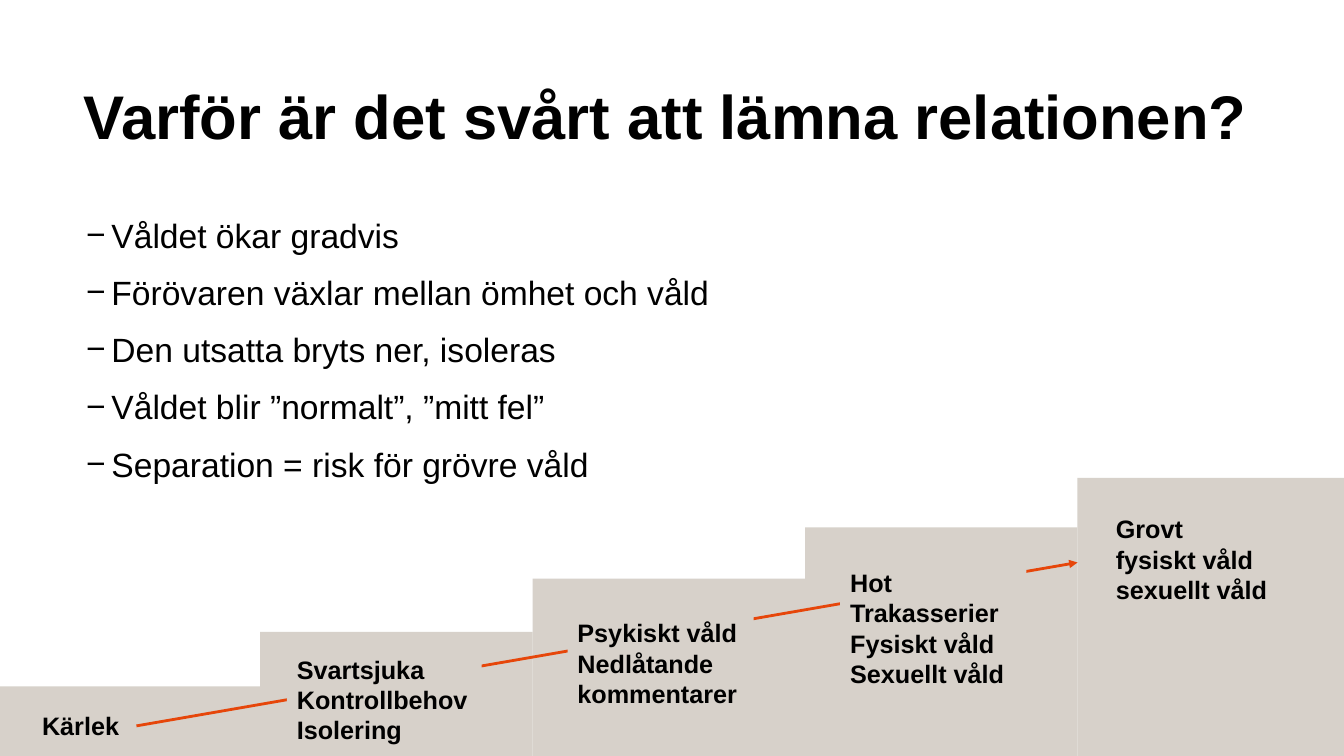
from dataclasses import dataclass

from lxml import etree
from pptx import Presentation
from pptx import util as u
from pptx.dml.color import RGBColor
from pptx.enum import shapes, text
from pptx.oxml import ns


@dataclass(frozen=True)
class Theme:
    font: str = "Arial"
    ink: RGBColor = RGBColor(0x00, 0x00, 0x00)
    stair: RGBColor = RGBColor(0xD7, 0xD1, 0xCA)
    arrow: RGBColor = RGBColor(0xE6, 0x46, 0x0A)
    title_size: float = 44
    body_size: float = 24
    label_size: float = 18


@dataclass(frozen=True)
class Box:
    left: float
    top: float
    width: float
    height: float

    def lengths(self) -> tuple:
        return u.Pt(self.left), u.Pt(self.top), u.Pt(self.width), u.Pt(self.height)


@dataclass(frozen=True)
class Label:
    box: Box
    lines: tuple[str, ...]


THEME = Theme()
TITLE = "Varför är det svårt att lämna relationen?"
TITLE_BOX = Box(52.5, 62, 855, 88)
REASONS_BOX = Box(52.5, 150, 757, 207)
REASONS = (
    "Våldet ökar gradvis",
    "Förövaren växlar mellan ömhet och våld",
    "Den utsatta bryts ner, isoleras",
    "Våldet blir ”normalt”, ”mitt fel”",
    "Separation = risk för grövre våld",
)
STAIR_TOPS = (490.3, 451.4, 413.3, 376.6, 341.3)
STAIR_BOTTOM = 542
STAIR_WIDTH = 194.6
FIRST_STAIR_RIGHT = 185.8
FIRST_STAIR_LEFT = -3.6
LOVE = Label(Box(23, 504, 74.5, 29), ("Kärlek",))
LABELS = (
    Label(Box(405.4, 437.6, 133, 72.7), ("Psykiskt våld", "Nedlåtande kommentarer")),
    Label(Box(600.2, 401.8, 133, 94.5), ("Hot", "Trakasserier Fysiskt våld", "Sexuellt våld")),
    Label(Box(205, 463.6, 139, 72.7), ("Svartsjuka", "Kontrollbehov", "Isolering")),
    Label(Box(790, 363.4, 126.7, 72.7), ("Grovt", "fysiskt våld", "sexuellt våld")),
)
ARROW_END = (769.7, 401.8)


def style(paragraph, size: float, bold: bool) -> None:
    paragraph.alignment = text.PP_ALIGN.LEFT
    font = paragraph.font
    font.name = THEME.font
    font.size = u.Pt(size)
    font.bold = bold
    font.color.rgb = THEME.ink


def add_title(slide) -> None:
    title = slide.shapes.title
    title.left, title.top, title.width, title.height = TITLE_BOX.lengths()
    frame = title.text_frame
    frame.text = TITLE
    frame.auto_size = text.MSO_AUTO_SIZE.NONE
    frame.vertical_anchor = text.MSO_ANCHOR.TOP
    paragraph = frame.paragraphs[0]
    paragraph.line_spacing = 0.8
    style(paragraph, THEME.title_size, True)


def add_bullet(paragraph) -> None:
    properties = paragraph._p.get_or_add_pPr()
    properties.set("marL", str(u.Pt(20)))
    properties.set("indent", str(u.Pt(-18)))
    etree.SubElement(properties, ns.qn("a:buFont")).set("typeface", THEME.font)
    etree.SubElement(properties, ns.qn("a:buChar")).set("char", "−")


def add_reasons(slide) -> None:
    frame = slide.shapes.add_textbox(*REASONS_BOX.lengths()).text_frame
    frame.word_wrap = True
    frame.text = "\n".join(REASONS)
    for paragraph in frame.paragraphs:
        add_bullet(paragraph)
        paragraph.space_after = u.Pt(12)
        style(paragraph, THEME.body_size, False)


def add_block(slide, box: Box):
    block = slide.shapes.add_shape(shapes.MSO_SHAPE.RECTANGLE, *box.lengths())
    block.shadow.inherit = False
    block.fill.solid()
    block.fill.fore_color.rgb = THEME.stair
    block.line.fill.background()
    return block


def add_stairs(slide) -> None:
    for index, top in enumerate(STAIR_TOPS):
        right = FIRST_STAIR_RIGHT + index * STAIR_WIDTH
        left = right - STAIR_WIDTH if index else FIRST_STAIR_LEFT
        add_block(slide, Box(left, top, right - left, STAIR_BOTTOM - top))


def add_label(slide, label: Label):
    block = add_block(slide, label.box)
    frame = block.text_frame
    frame.word_wrap = True
    frame.auto_size = text.MSO_AUTO_SIZE.SHAPE_TO_FIT_TEXT
    frame.vertical_anchor = text.MSO_ANCHOR.TOP
    frame.text = "\n".join(label.lines)
    for paragraph in frame.paragraphs:
        style(paragraph, THEME.label_size, True)
    return block


def add_arrow(slide, start) -> None:
    end_x, end_y = ARROW_END
    arrow = slide.shapes.add_connector(
        shapes.MSO_CONNECTOR.STRAIGHT, 0, 0, u.Pt(end_x), u.Pt(end_y)
    )
    arrow.begin_connect(start, 3)
    arrow.line.color.rgb = THEME.arrow
    arrow.line.width = u.Pt(2)
    etree.SubElement(arrow.line._get_or_add_ln(), ns.qn("a:tailEnd")).set("type", "triangle")
    etree.SubElement(arrow._element.spPr, ns.qn("a:effectLst"))


def main() -> None:
    presentation = Presentation()
    presentation.slide_width = u.Pt(960)
    presentation.slide_height = u.Pt(540)
    slide = presentation.slides.add_slide(presentation.slide_layouts[5])
    add_title(slide)
    add_reasons(slide)
    add_stairs(slide)
    love = add_label(slide, LOVE)
    add_arrow(slide, love)
    for label in LABELS:
        add_label(slide, label)
    presentation.save("out.pptx")


if __name__ == "__main__":
    main()
